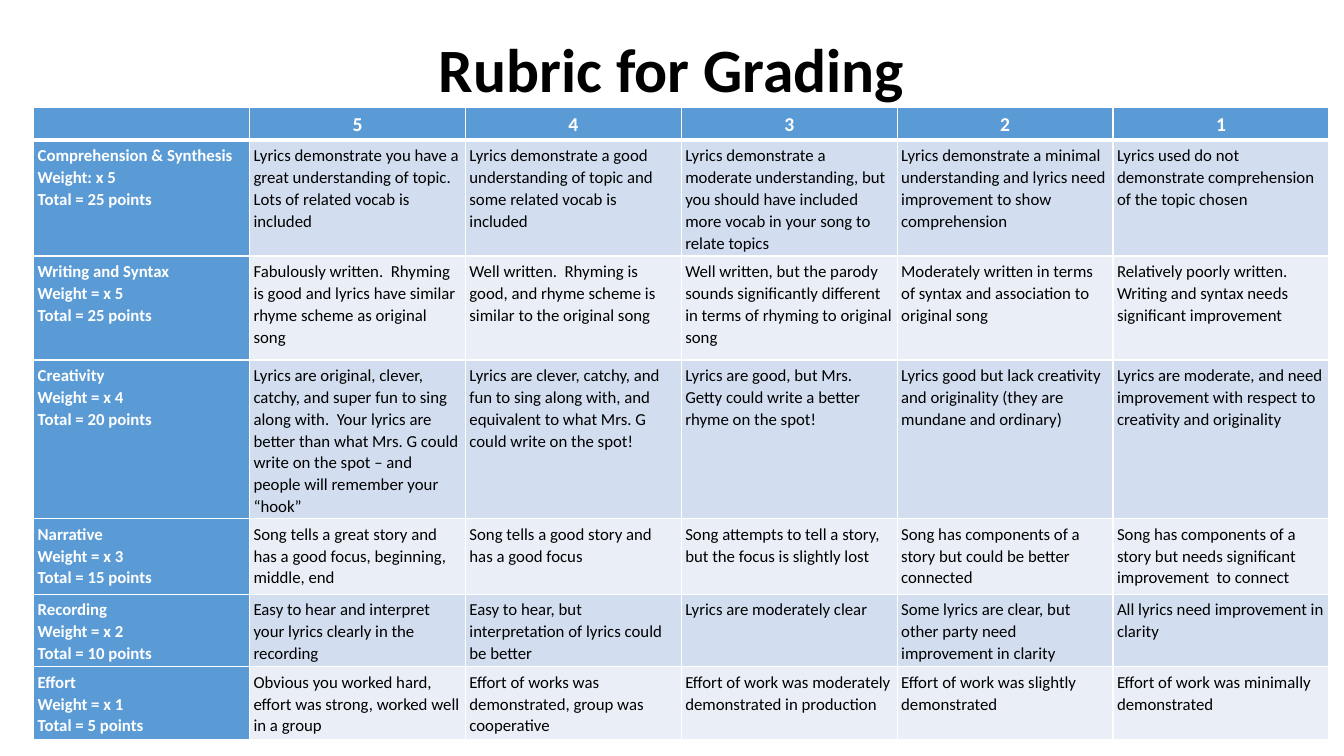
import lxml.etree
import pptx
import pptx.dml.color
import pptx.enum.text
import pptx.oxml.ns
import pptx.util

Cm = pptx.util.Cm
Pt = pptx.util.Pt
RGBColor = pptx.dml.color.RGBColor
PP_ALIGN = pptx.enum.text.PP_ALIGN
qn = pptx.oxml.ns.qn

TITLE = "Rubric for Grading"
SCORES = ["", "5", "4", "3", "2", "1"]
CRITERIA = [
    ["Comprehension & Synthesis\nWeight: x 5\nTotal = 25 points",
     "Lyrics demonstrate you have a great understanding of topic.  Lots of related vocab is included",
     "Lyrics demonstrate a good understanding of topic and some related vocab is included",
     "Lyrics demonstrate a moderate understanding, but you should have included more vocab in your song to relate topics",
     "Lyrics demonstrate a minimal understanding and lyrics need improvement to show comprehension",
     "Lyrics used do not demonstrate comprehension of the topic chosen"],
    ["Writing and Syntax\nWeight = x 5\nTotal = 25 points",
     "Fabulously written.  Rhyming is good and lyrics have similar rhyme scheme as original song",
     "Well written.  Rhyming is good, and rhyme scheme is similar to the original song",
     "Well written, but the parody sounds significantly different in terms of rhyming to original song",
     "Moderately written in terms of syntax and association to original song",
     "Relatively poorly written.  Writing and syntax needs significant improvement"],
    ["Creativity\nWeight = x 4\nTotal = 20 points",
     "Lyrics are original, clever, catchy, and super fun to sing along with.  Your lyrics are better than what Mrs. G could write on the spot – and people will remember your “hook”",
     "Lyrics are clever, catchy, and fun to sing along with, and equivalent to what Mrs. G could write on the spot!",
     "Lyrics are good, but Mrs. Getty could write a better rhyme on the spot!",
     "Lyrics good but lack creativity and originality (they are mundane and ordinary)",
     "Lyrics are moderate, and need improvement with respect to creativity and originality"],
    ["Narrative\nWeight = x 3\nTotal = 15 points",
     "Song tells a great story and has a good focus, beginning, middle, end",
     "Song tells a good story and has a good focus",
     "Song attempts to tell a story, but the focus is slightly lost",
     "Song has components of a story but could be better connected",
     "Song has components of a story but needs significant improvement  to connect"],
    ["Recording\nWeight = x 2\nTotal = 10 points",
     "Easy to hear and interpret your lyrics clearly in the recording",
     "Easy to hear, but interpretation of lyrics could be better",
     "Lyrics are moderately clear",
     "Some lyrics are clear, but other party need improvement in clarity",
     "All lyrics need improvement in clarity"],
    ["Effort\nWeight = x 1\nTotal = 5 points",
     "Obvious you worked hard,  effort was strong, worked well in a group",
     "Effort of works was demonstrated, group was cooperative",
     "Effort of work was moderately demonstrated in production",
     "Effort of work was slightly demonstrated",
     "Effort of work was minimally demonstrated"],
]
ROW_HEIGHTS = [0.71, 2.62, 2.62, 3.58, 1.9, 1.63, 1.63]
COL_WIDTH = 5.44
MARGIN = Cm(0.1)

FONT = "Calibri"
BLACK = RGBColor(0x00, 0x00, 0x00)
WHITE = RGBColor(0xFF, 0xFF, 0xFF)
BLUE = RGBColor(0x5B, 0x9B, 0xD5)
BANDS = [RGBColor(0xD2, 0xDE, 0xEF), RGBColor(0xEA, 0xEF, 0xF7)]


def style_text(tf, size, color, bold, align, spacing):
    for p in tf.paragraphs:
        p.alignment = align
        p.line_spacing = spacing
        p._p.get_or_add_endParaRPr().set("sz", str(size * 100))
        for r in p.runs:
            r.font.name = FONT
            r.font.size = Pt(size)
            r.font.bold = bold
            r.font.color.rgb = color


def add_borders(cell, top, bottom):
    tcPr = cell._tc.get_or_add_tcPr()
    for side, width in (("L", 1), ("R", 1), ("T", top), ("B", bottom)):
        ln = lxml.etree.SubElement(tcPr, qn("a:ln" + side), w=str(Pt(width)))
        fill = lxml.etree.SubElement(ln, qn("a:solidFill"))
        lxml.etree.SubElement(fill, qn("a:srgbClr"), val=str(WHITE))


prs = pptx.Presentation()
prs.slide_width = Cm(33.87)
prs.slide_height = Cm(19.05)
s = prs.slides.add_slide(prs.slide_layouts[6])

sp = s.shapes.add_textbox(Cm(2.33), 0, Cm(29.21), Cm(3.68))
tf = sp.text_frame
tf.word_wrap = True
tf.vertical_anchor = pptx.enum.text.MSO_ANCHOR.MIDDLE
tf.text = TITLE
style_text(tf, 44, BLACK, True, PP_ALIGN.CENTER, 0.9)

rows = [SCORES] + CRITERIA
table = s.shapes.add_table(len(rows), len(SCORES), Cm(0.85), Cm(2.7),
                           Cm(COL_WIDTH * len(SCORES)), Cm(sum(ROW_HEIGHTS))).table
for col in table.columns:
    col.width = Cm(COL_WIDTH)

for i, texts in enumerate(rows):
    table.rows[i].height = Cm(ROW_HEIGHTS[i])
    for j, text in enumerate(texts):
        cell = table.cell(i, j)
        header = i == 0
        heading = header or j == 0
        cell.margin_left = cell.margin_right = MARGIN
        cell.margin_top = cell.margin_bottom = MARGIN
        add_borders(cell, 3 if i == 1 else 1, 3 if header else 1)
        cell.fill.solid()
        cell.fill.fore_color.rgb = BLUE if heading else BANDS[(i - 1) % 2]
        cell.text_frame.text = text
        style_text(cell.text_frame, 14 if header else 12, WHITE if heading else BLACK,
                   heading, PP_ALIGN.CENTER if header else PP_ALIGN.LEFT, 1.07)

prs.save("out.pptx")
